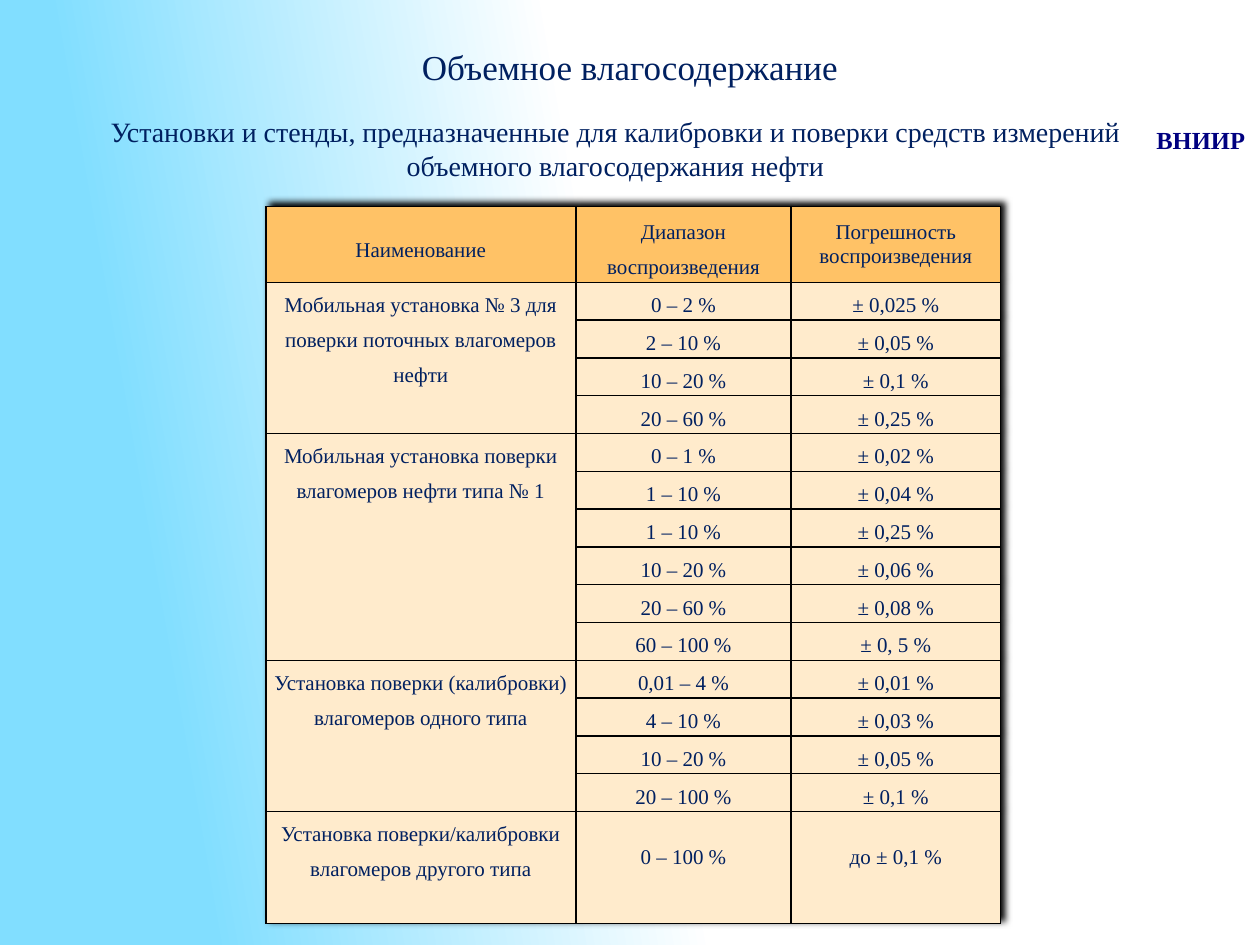
from copy import deepcopy

from pptx import Presentation
from pptx.dml.color import RGBColor
from pptx.enum.text import MSO_ANCHOR as Anchor, PP_ALIGN as Align
from pptx.oxml import parse_xml
from pptx.oxml.ns import nsdecls
from pptx.util import Inches, Pt

NAVY = RGBColor(0x00, 0x20, 0x60)
LABEL_BLUE = RGBColor(0x00, 0x00, 0x80)
WHITE = RGBColor(0xFF, 0xFF, 0xFF)
SKY = RGBColor(0x81, 0xDE, 0xFF)
HEADER_FILL = RGBColor(0xFF, 0xC2, 0x66)
BODY_FILL = RGBColor(0xFF, 0xEB, 0xCC)
FONT = "Times New Roman"

# Content: text, left, top, width, height, size, colour, bold
TEXTS = [
    ("Установки и стенды, предназначенные для калибровки и поверки средств "
     "измерений объемного влагосодержания нефти",
     0.55, 0.86, 8.67, 0.64, 16, NAVY, False),
    ("Объемное влагосодержание", 1.33, 0.31, 7.34, 0.44, 20, NAVY, False),
    ("ВНИИР", 9.06, 0.94, 0.94, 0.34, 14, LABEL_BLUE, True),
]
HEADER = ("Наименование", "Диапазон воспроизведения", "Погрешность воспроизведения")
INSTALLATIONS = [
    ("Мобильная установка № 3 для поверки поточных влагомеров нефти", [
        ("0 – 2 %", "± 0,025 %"),
        ("2 – 10 %", "± 0,05 %"),
        ("10 – 20 %", "± 0,1 %"),
        ("20 – 60 %", "± 0,25 %"),
    ]),
    ("Мобильная установка поверки влагомеров нефти типа № 1", [
        ("0 – 1 %", "± 0,02 %"),
        ("1 – 10 %", "± 0,04 %"),
        ("1 – 10 %", "± 0,25 %"),
        ("10 – 20 %", "± 0,06 %"),
        ("20 – 60 %", "± 0,08 %"),
        ("60 – 100 %", "± 0, 5 %"),
    ]),
    ("Установка поверки (калибровки) влагомеров одного типа", [
        ("0,01 – 4 %", "± 0,01 %"),
        ("4 – 10 %", "± 0,03 %"),
        ("10 – 20 %", "± 0,05 %"),
        ("20 – 100 %", "± 0,1 %"),
    ]),
    ("Установка поверки/калибровки влагомеров другого типа", [
        ("0 – 100 %", "до ± 0,1 %"),
    ]),
]
COLUMN_WIDTHS = (2.46, 1.71, 1.66)
HEADER_HEIGHT, ROW_HEIGHT, LAST_HEIGHT = 0.6, 0.3, 0.89


def style_paragraph(paragraph, size, color, bold=False):
    paragraph.alignment = Align.CENTER
    font = paragraph.font
    font.name, font.size, font.bold = FONT, Pt(size), bold
    font.color.rgb = color


def add_text(slide, text, left, top, width, height, size, color, bold):
    box = slide.shapes.add_textbox(*map(Inches, (left, top, width, height)))
    box.text_frame.word_wrap = True
    box.text_frame.text = text
    style_paragraph(box.text_frame.paragraphs[0], size, color, bold)


def add_borders(cell):
    properties = cell._tc.get_or_add_tcPr()
    for position, side in enumerate(("lnL", "lnR", "lnT", "lnB")):
        properties.insert(position, parse_xml(
            f'<a:{side} {nsdecls("a")} w="12700"><a:solidFill>'
            f'<a:srgbClr val="000000"/></a:solidFill></a:{side}>'))


def fill_cell(cell, text, fill, spacing=1.5, anchor=Anchor.TOP, margin_top=0):
    cell.text = text
    cell.margin_left = cell.margin_right = Inches(0.05)
    cell.margin_top, cell.margin_bottom = Inches(margin_top), 0
    cell.vertical_anchor = anchor
    paragraph = cell.text_frame.paragraphs[0]
    style_paragraph(paragraph, 12, NAVY)
    paragraph.line_spacing = spacing
    cell.fill.solid()
    cell.fill.fore_color.rgb = fill


def add_installation_table(slide):
    row_count = 1 + sum(len(ranges) for _, ranges in INSTALLATIONS)
    heights = [HEADER_HEIGHT] + [ROW_HEIGHT] * (row_count - 2) + [LAST_HEIGHT]
    frame = slide.shapes.add_table(
        row_count, len(HEADER), Inches(2.11), Inches(1.64),
        Inches(sum(COLUMN_WIDTHS)), Inches(sum(heights)))
    table = frame.table
    for column, width in zip(table.columns, COLUMN_WIDTHS):
        column.width = Inches(width)
    for row, height in zip(table.rows, heights):
        row.height = Inches(height)

    # Header row
    for column, text in enumerate(HEADER):
        fill_cell(table.cell(0, column), text, HEADER_FILL,
                  spacing=1.0 if column == 2 else 1.5, anchor=Anchor.MIDDLE)

    # One merged name per group of ranges
    first = 1
    for name, ranges in INSTALLATIONS:
        name_cell = table.cell(first, 0)
        if len(ranges) > 1:
            name_cell.merge(table.cell(first + len(ranges) - 1, 0))
        fill_cell(name_cell, name, BODY_FILL)
        for row, values in enumerate(ranges, first):
            margin_top = 0.18 if row == row_count - 1 else 0
            for column, value in enumerate(values, 1):
                fill_cell(table.cell(row, column), value, BODY_FILL,
                          margin_top=margin_top)
        first += len(ranges)

    for cell in table.iter_cells():
        add_borders(cell)

    # Soft shadow up and to the right
    table._tbl.tblPr.insert(0, parse_xml(
        f'<a:effectLst {nsdecls("a")}><a:outerShdw blurRad="50800" dist="38100" '
        'dir="18900000" algn="bl" rotWithShape="0"><a:srgbClr val="000000"/>'
        '</a:outerShdw></a:effectLst>'))


def set_background(slide):
    fill = slide.background.fill
    fill.gradient()
    fill.gradient_angle = 190  # counter-clockwise
    stop_list = slide.element.xpath(".//a:gsLst")[0]
    stop_list.append(deepcopy(stop_list[-1]))
    stops = ((0.5, WHITE), (0.85, SKY), (1.0, SKY))
    for stop, (position, color) in zip(fill.gradient_stops, stops):
        stop.position = position
        stop.color.rgb = color


def main():
    presentation = Presentation()
    presentation.slide_width, presentation.slide_height = Inches(10), Inches(7.5)
    slide = presentation.slides.add_slide(presentation.slide_layouts[6])
    set_background(slide)
    add_installation_table(slide)
    for text in TEXTS:
        add_text(slide, *text)
    presentation.save("out.pptx")


if __name__ == "__main__":
    main()
